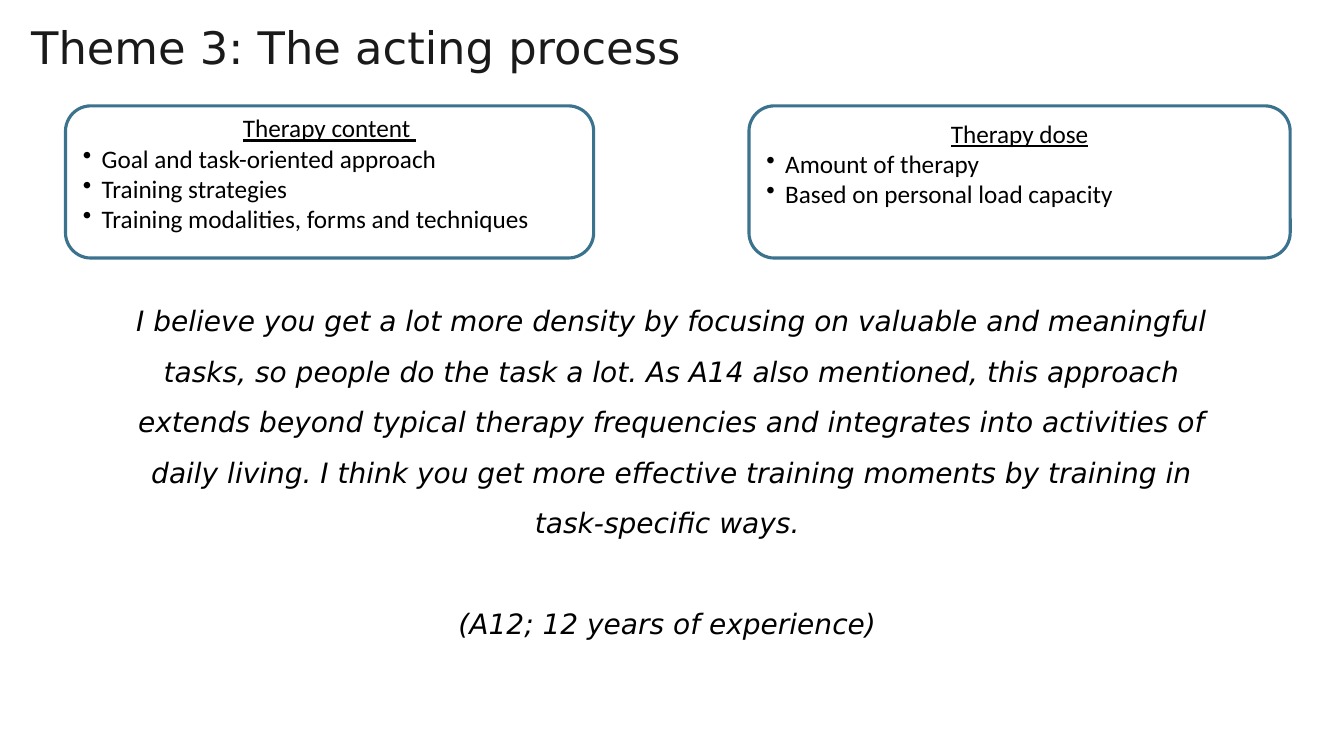
from lxml import etree
from pptx import Presentation
from pptx.dml.color import RGBColor
from pptx.enum import shapes, text
from pptx.oxml import ns
from pptx.util import Pt

BLACK = RGBColor(0x00, 0x00, 0x00)
CHARCOAL = RGBColor(0x1A, 0x1A, 0x1A)
TEAL = RGBColor(0x3B, 0x72, 0x8D)

TITLE_FONT = {"name": "DejaVu Sans", "size": Pt(32)}
CARD_FONT = {"name": "Calibri", "size": Pt(18)}
HEADING_FONT = {**CARD_FONT, "underline": True}
QUOTE_FONT = {"name": "DejaVu Sans", "size": Pt(20), "italic": True}

CENTERED = {"alignment": text.PP_ALIGN.CENTER}
LEFT = {"alignment": text.PP_ALIGN.LEFT}
QUOTE_LINES = {**CENTERED, "line_spacing": 1.5}


def apply(target, values):
    for name, value in values.items():
        setattr(target, name, value)


def set_frame(frame, anchor, left, top, right, bottom):
    apply(frame, {
        "word_wrap": True, "vertical_anchor": anchor,
        "margin_left": Pt(left), "margin_top": Pt(top),
        "margin_right": Pt(right), "margin_bottom": Pt(bottom),
    })


def write(para, words, layout, font, color=BLACK):
    apply(para, layout)
    span = para.add_run()
    span.text = words
    apply(span.font, font)
    span.font.color.rgb = color


def add_bullet(para, indent):
    props = para._p.get_or_add_pPr()
    props.set("marL", str(Pt(indent)))
    props.set("indent", str(Pt(-indent)))
    etree.SubElement(props, ns.qn("a:buChar")).set("char", "•")


def add_title(page, left, top, width, height, words):
    box = page.shapes.add_textbox(Pt(left), Pt(top), Pt(width), Pt(height))
    set_frame(box.text_frame, text.MSO_ANCHOR.TOP, 5, 5, 5, 5)
    write(box.text_frame.paragraphs[0], words, LEFT, TITLE_FONT, CHARCOAL)


def add_card(page, left, top, width, height, heading, points, anchor, insets):
    box = page.shapes.add_shape(
        shapes.MSO_SHAPE.ROUNDED_RECTANGLE,
        Pt(left), Pt(top), Pt(width), Pt(height))
    box.shadow.inherit = False
    box.fill.background()
    box.line.color.rgb = TEAL
    box.line.width = Pt(2.25)
    frame = box.text_frame
    set_frame(frame, anchor, *insets)
    write(frame.paragraphs[0], heading, CENTERED, HEADING_FONT)
    for point in points:
        para = frame.add_paragraph()
        add_bullet(para, 13.5)
        write(para, point, LEFT, CARD_FONT)


def add_quote(page, left, top, width, height, quote, speaker):
    box = page.shapes.add_textbox(Pt(left), Pt(top), Pt(width), Pt(height))
    frame = box.text_frame
    set_frame(frame, text.MSO_ANCHOR.TOP, 7.2, 3.6, 7.2, 3.6)
    write(frame.paragraphs[0], quote, QUOTE_LINES, QUOTE_FONT)
    write(frame.add_paragraph(), speaker,
          {**QUOTE_LINES, "space_before": Pt(36)}, QUOTE_FONT)


def main():
    deck = Presentation()
    deck.slide_width, deck.slide_height = Pt(960), Pt(540)
    page = deck.slides.add_slide(deck.slide_layouts[6])
    add_title(page, 17.3, 9.4, 862.6, 48.2, "Theme 3: The acting process")
    add_card(page, 46.8, 75.6, 377.3, 108.7, "Therapy content ", [
        "Goal and task-oriented approach",
        "Training strategies",
        "Training modalities, forms and techniques",
    ], text.MSO_ANCHOR.MIDDLE, (7.2, 0, 7.2, 12.5))
    add_card(page, 535, 75.6, 386.6, 108.7, "Therapy dose", [
        "Amount of therapy",
        "Based on personal load capacity",
    ], text.MSO_ANCHOR.TOP, (7.2, 3.6, 7.2, 3.6))
    add_quote(
        page, 83.5, 201.6, 792.7, 283.7,
        "I believe you get a lot more density by focusing on valuable and "
        "meaningful tasks, so people do the task a lot. As A14 also "
        "mentioned, this approach extends beyond typical therapy frequencies "
        "and integrates into activities of daily living. I think you get more "
        "effective training moments by training in task-specific ways. ",
        "(A12; 12 years of experience) ")
    deck.save("out.pptx")


if __name__ == "__main__":
    main()
